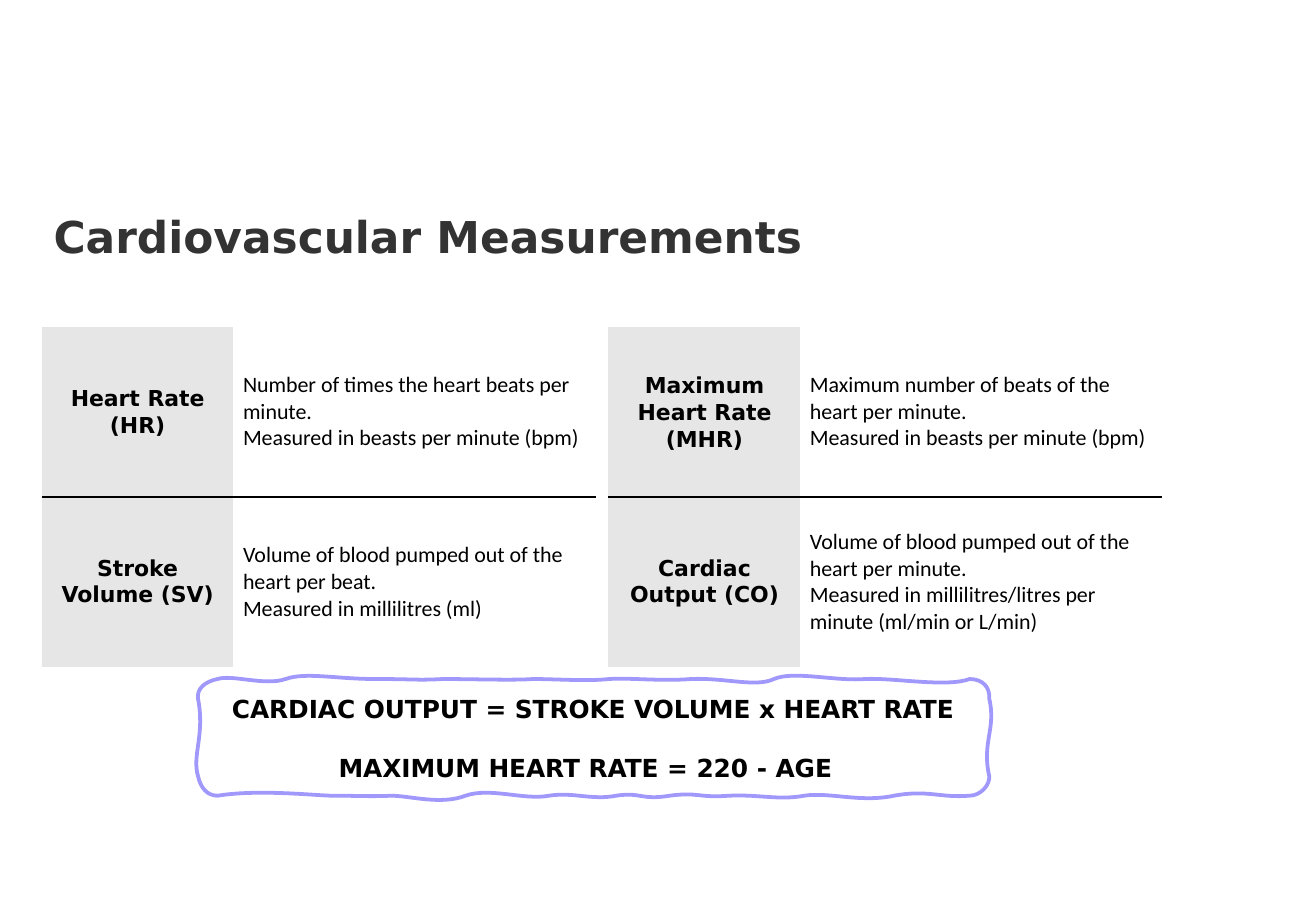
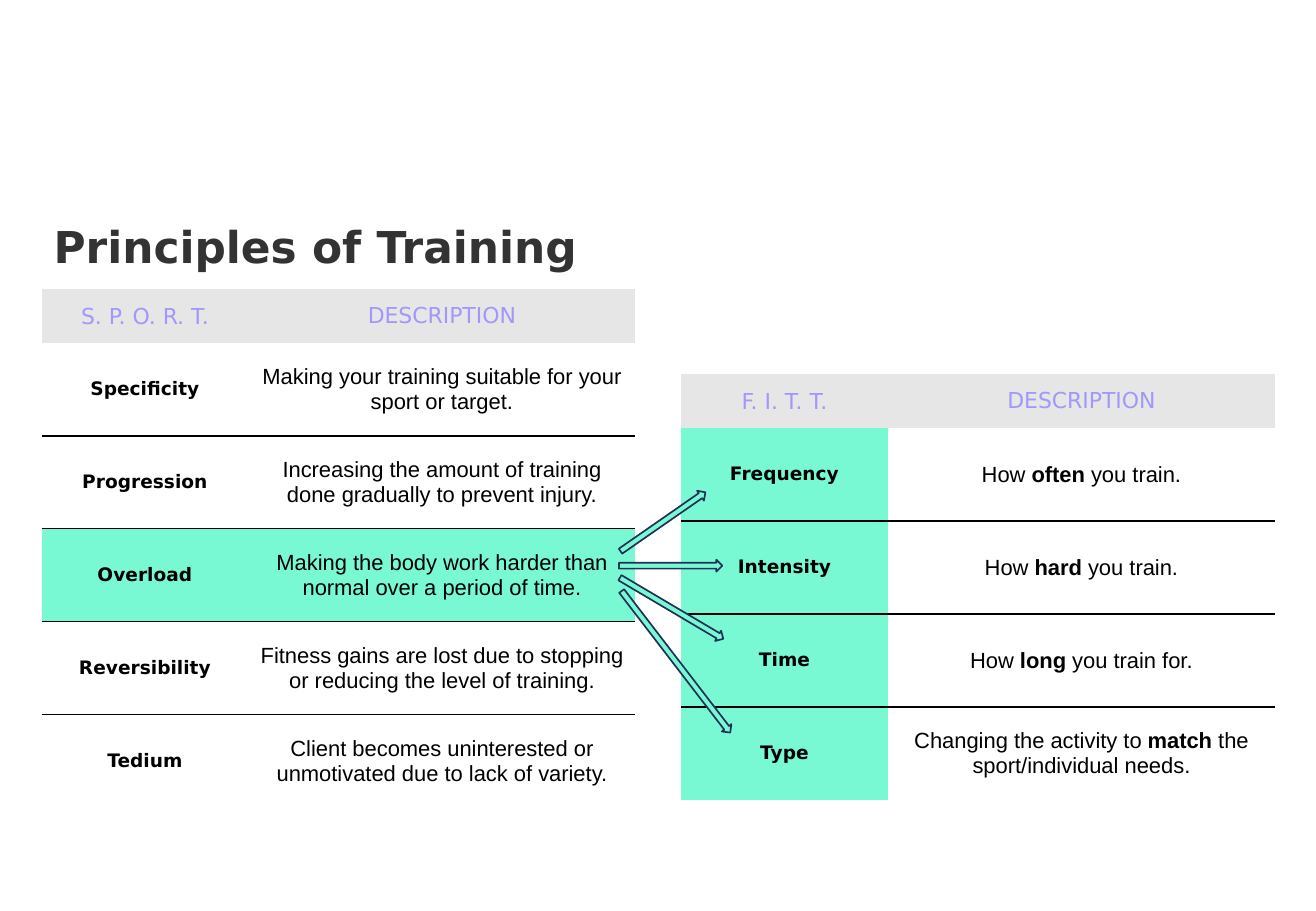
from collections import namedtuple

from lxml import etree
from pptx import Presentation
from pptx.dml.color import RGBColor
from pptx.enum.shapes import MSO_SHAPE
from pptx.enum.text import MSO_ANCHOR, MSO_AUTO_SIZE, PP_ALIGN
from pptx.oxml.ns import qn
from pptx.util import Cm, Pt

LEFT, CENTER = PP_ALIGN.LEFT, PP_ALIGN.CENTER
TOP, MIDDLE = MSO_ANCHOR.TOP, MSO_ANCHOR.MIDDLE
GROW = MSO_AUTO_SIZE.SHAPE_TO_FIT_TEXT
RECTANGLE, RIGHT_ARROW = MSO_SHAPE.RECTANGLE, MSO_SHAPE.RIGHT_ARROW

BLACK = RGBColor(0x00, 0x00, 0x00)
WHITE = RGBColor(0xFF, 0xFF, 0xFF)
CHARCOAL = RGBColor(0x33, 0x33, 0x33)
GREY = RGBColor(0xE7, 0xE6, 0xE6)
LILAC = RGBColor(0xA0, 0x98, 0xFA)
MINT = RGBColor(0x78, 0xF9, 0xD4)
NAVY = RGBColor(0x1E, 0x32, 0x56)

Style = namedtuple("Style", "font size bold color align")
TITLE = Style("DejaVu Sans", 26, True, CHARCOAL, LEFT)
FORMULA = Style("DejaVu Sans", 14.63, True, BLACK, LEFT)
MEASURE = Style("DejaVu Sans", 13, True, BLACK, CENTER)
MEANING = Style("Calibri", 13, False, BLACK, LEFT)
HEADER = Style("DejaVu Sans", 13, False, LILAC, CENTER)
PRINCIPLE = Style("DejaVu Sans", 11, True, BLACK, CENTER)
DESCRIPTION = Style("Arial", 13, False, BLACK, CENTER)

MARGIN_LEFT = 0.87
TITLE_SIZE = (18.36, 1.37)
NO_TABLE_STYLE = "{2D5ABB26-0587-4C30-8999-92F81FD0307C}"

# Table contents; asterisks enclose bold words
RATES = [
    ("Heart Rate (HR)",
     "Number of times the heart beats per minute.\nMeasured in beasts per minute (bpm)"),
    ("Stroke Volume (SV)",
     "Volume of blood pumped out of the heart per beat.\nMeasured in millilitres (ml)"),
]
OUTPUTS = [
    ("Maximum Heart Rate (MHR)",
     "Maximum number of beats of the heart per minute.\nMeasured in beasts per minute (bpm)"),
    ("Cardiac Output (CO)",
     "Volume of blood pumped out of the heart per minute.\n"
     "Measured in millilitres/litres per minute (ml/min or L/min)"),
]
SPORT = [
    ("S. P. O. R. T.", "DESCRIPTION"),
    ("Specificity", "Making your training suitable for your sport or target."),
    ("Progression", "Increasing the amount of training done gradually to prevent injury."),
    ("Overload", "Making the body work harder than normal over a period of time."),
    ("Reversibility", "Fitness gains are lost due to stopping or reducing the level of training."),
    ("Tedium", "Client becomes uninterested or unmotivated due to lack of variety."),
]
FITT = [
    ("F. I. T. T.", "DESCRIPTION"),
    ("Frequency", "How *often* you train."),
    ("Intensity", "How *hard* you train."),
    ("Time", "How *long* you train for."),
    ("Type", "Changing the activity to *match* the sport/individual needs."),
]

# Wavy frame in cm from its corner: start, then two handles and an end per curve
FRAME_START = (0, 0.41)
FRAME_CURVES = [
    (-0.03, 0.2, 0.15, 0.05, 0.41, 0), (0.71, -0.1, 1.4, 0.15, 1.83, 0),
    (2.26, -0.15, 2.87, 0, 3.71, 0), (4.57, 0, 4.52, 0.03, 5.13, 0),
    (5.74, 0, 6.58, 0.03, 7.01, 0), (7.47, 0, 8.15, 0.05, 8.59, 0),
    (9.02, -0.03, 9.65, 0.05, 10.31, 0), (11.02, -0.03, 11.66, 0.18, 12.04, 0),
    (12.45, -0.18, 13.31, 0.05, 13.94, 0), (14.55, -0.03, 15.65, 0.18, 16.13, 0),
    (16.41, 0, 16.56, 0.18, 16.54, 0.41), (16.69, 1.04, 16.38, 1.32, 16.54, 2.03),
    (16.56, 2.21, 16.36, 2.44, 16.13, 2.44), (15.49, 2.49, 15.27, 2.31, 14.55, 2.44),
    (13.84, 2.59, 13.21, 2.36, 12.67, 2.44), (12.14, 2.54, 11.73, 2.41, 11.1, 2.44),
    (10.46, 2.49, 10.46, 2.36, 9.86, 2.44), (9.25, 2.54, 9.27, 2.36, 8.74, 2.44),
    (8.23, 2.54, 7.85, 2.36, 7.34, 2.44), (6.81, 2.54, 6.12, 2.26, 5.59, 2.44),
    (5.08, 2.64, 4.42, 2.44, 4.04, 2.44), (3.63, 2.46, 3.25, 2.44, 2.92, 2.44),
    (2.62, 2.46, 1.35, 2.29, 0.41, 2.44), (0.18, 2.44, 0.05, 2.26, 0, 2.03),
    (-0.13, 1.6, 0.15, 1.17, 0, 0.41),
]

# Arrows from Overload: centre x, centre y, length, angle
OVERLOAD_ARROWS = [
    (13.86, 10.91, 2.16, -34.8),
    (14.04, 12.72, 2.51, 30.6),
    (14.13, 13.84, 3.73, 52.5),
    (14.02, 11.83, 2.16, 0),
]
ARROW_HEIGHT = 0.25


def write(frame, text, style):
    """Fill a text frame, one paragraph a line."""
    frame.word_wrap = True
    for i, line in enumerate(text.split("\n")):
        paragraph = frame.paragraphs[0] if i == 0 else frame.add_paragraph()
        paragraph.alignment = style.align
        font = paragraph.font
        font.name, font.size, font.bold = style.font, Pt(style.size), style.bold
        font.color.rgb = style.color
        for part, words in enumerate(line.split("*")):
            run = paragraph.add_run()
            run.text = words
            if part % 2:
                run.font.bold = True


def write_label(shape, text, style):
    frame = shape.text_frame
    frame.vertical_anchor = TOP
    write(frame, text, style)
    frame.auto_size = GROW


def paint(shape, fill=None, line=None, weight=1):
    shape.shadow.inherit = False
    if fill is None:
        shape.fill.background()
    else:
        shape.fill.solid()
        shape.fill.fore_color.rgb = fill
    if line is None:
        shape.line.fill.background()
    else:
        shape.line.color.rgb = line
        shape.line.width = Pt(weight)


def add_outline(slide, left, top, points):
    """Closed freeform through points given in cm from its corner."""
    places = [(Cm(left + x), Cm(top + y)) for x, y in points]
    builder = slide.shapes.build_freeform(*places[0])
    builder.add_line_segments(places[1:], close=True)
    return builder.convert_to_shape()


def rule_below(cell):
    tc_pr = cell._tc.get_or_add_tcPr()
    line = etree.Element(qn("a:lnB"), w=str(Pt(1)))
    fill = etree.SubElement(line, qn("a:solidFill"))
    etree.SubElement(fill, qn("a:srgbClr"), val=str(BLACK))
    tc_pr.insert(0, line)


def add_grid(slide, left, top, widths, heights, rows, styles, fills, ruled):
    """Table of rows; fills maps (row, column) to a colour, ruled lists rows with a line below."""
    frame = slide.shapes.add_table(len(rows), len(widths), Cm(left), Cm(top),
                                   Cm(sum(widths)), Cm(sum(heights)))
    table = frame.table
    table.first_row = table.horz_banding = False
    table._tbl.tblPr.find(qn("a:tableStyleId")).text = NO_TABLE_STYLE
    for column, width in zip(table.columns, widths):
        column.width = Cm(width)
    for r, texts in enumerate(rows):
        table.rows[r].height = Cm(heights[r])
        for c, text in enumerate(texts):
            cell = table.cell(r, c)
            cell.vertical_anchor = MIDDLE
            cell.margin_left = cell.margin_right = Cm(0.2)
            cell.margin_top = cell.margin_bottom = Cm(0.1)
            write(cell.text_frame, text, styles(r)[c])
            if (r, c) in fills:
                cell.fill.solid()
                cell.fill.fore_color.rgb = fills[r, c]
            else:
                cell.fill.background()
            if r in ruled:
                rule_below(cell)
    # The first label of each table is set slightly looser
    table.cell(0, 0).text_frame.paragraphs[0].line_spacing = 1.07


def add_measures(slide, left, top, rows):
    add_grid(slide, left, top, (4.01, 7.57), (3.56, 3.56), rows,
             lambda r: (MEASURE, MEANING), {(0, 0): GREY, (1, 0): GREY}, [0])


def add_principles(slide, left, top, body_height, rows, highlights):
    fills = {(0, 0): GREY, (0, 1): GREY}
    fills.update({spot: MINT for spot in highlights})
    last = len(rows) - 1
    add_grid(slide, left, top, (4.32, 8.09), [1.13] + [body_height / last] * last, rows,
             lambda r: (PRINCIPLE, DESCRIPTION) if r else (HEADER, HEADER),
             fills, range(1, last))


def add_wavy_frame(slide, left, top):
    ends = [curve[4:] for curve in FRAME_CURVES[:-1]]
    frame = add_outline(slide, left, top, [FRAME_START] + ends)
    paint(frame, line=LILAC, weight=2.25)
    # Turn the straight sides into curves
    outline = next(frame._element.iter(qn("a:moveTo"))).getparent()
    for side in outline.findall(qn("a:lnTo")):
        outline.remove(side)
    for i, curve in enumerate(FRAME_CURVES, start=1):
        bend = etree.Element(qn("a:cubicBezTo"))
        for x, y in zip(curve[::2], curve[1::2]):
            etree.SubElement(bend, qn("a:pt"), x=str(Cm(x)), y=str(Cm(y)))
        outline.insert(i, bend)


def add_formula(slide, left, top, width, text):
    height = 0.89
    box = add_outline(slide, left, top, [(0, 0), (width, 0), (width, height), (0, height)])
    paint(box)
    write_label(box, text, FORMULA)


def add_formulas(slide, left, top):
    add_formula(slide, left + 0.46, top + 0.18, 16.26,
                "CARDIAC OUTPUT = STROKE VOLUME x HEART RATE")
    add_formula(slide, left + 2.69, top + 1.42, 11.23, "MAXIMUM HEART RATE = 220 - AGE")
    add_wavy_frame(slide, left, top)


def add_arrow(slide, center_x, center_y, length, angle):
    arrow = slide.shapes.add_shape(RIGHT_ARROW, Cm(center_x - length / 2),
                                   Cm(center_y - ARROW_HEIGHT / 2),
                                   Cm(length), Cm(ARROW_HEIGHT))
    arrow.rotation = angle
    paint(arrow, MINT, NAVY)


def measurements_slide(slide):
    width, height = map(Cm, TITLE_SIZE)
    title = slide.shapes.add_textbox(Cm(MARGIN_LEFT), Cm(4.27), width, height)
    write_label(title, "Cardiovascular Measurements", TITLE)
    add_measures(slide, 12.72, 6.83, OUTPUTS)
    add_measures(slide, MARGIN_LEFT, 6.83, RATES)
    add_formulas(slide, 4.14, 14.2)


def principles_slide(slide):
    add_principles(slide, MARGIN_LEFT, 6.04, 9.72, SPORT, [(3, 0), (3, 1)])
    width, height = map(Cm, TITLE_SIZE)
    title = slide.shapes.add_shape(RECTANGLE, Cm(MARGIN_LEFT), Cm(4.47), width, height)
    paint(title, WHITE)
    write_label(title, "Principles of Training", TITLE)
    add_principles(slide, 14.24, 7.82, 7.78, FITT, [(r, 0) for r in range(1, len(FITT))])
    for arrow in OVERLOAD_ARROWS:
        add_arrow(slide, *arrow)


def main():
    deck = Presentation()
    deck.slide_width, deck.slide_height = Cm(27.51), Cm(19.05)
    blank = deck.slide_layouts[6]
    for build in (measurements_slide, principles_slide):
        build(deck.slides.add_slide(blank))
    deck.save("out.pptx")


if __name__ == "__main__":
    main()
